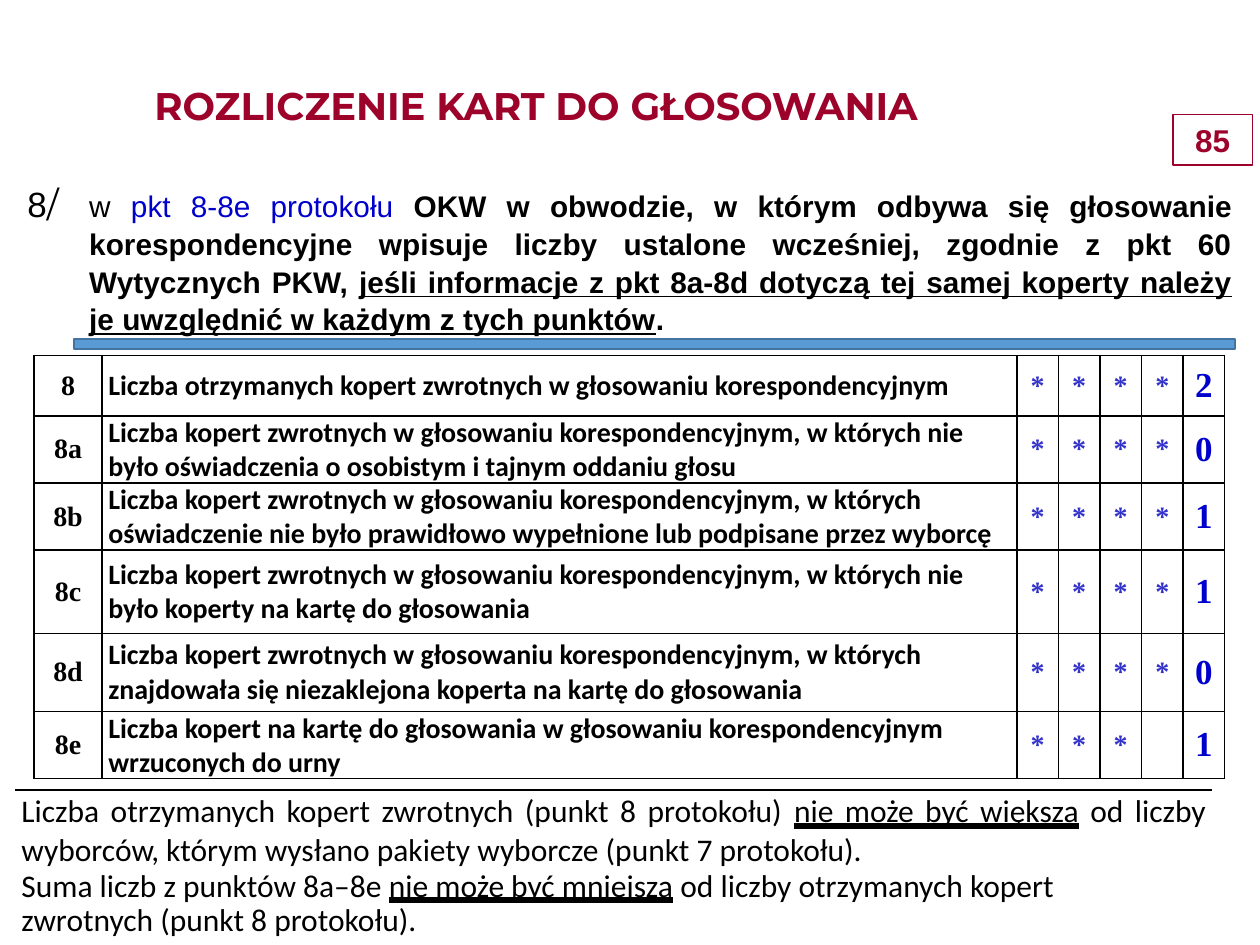
import pptx
import pptx.util
import pptx.dml.color
import pptx.enum.shapes
import pptx.enum.text
import pptx.oxml.ns
from lxml import etree

RGB = pptx.dml.color.RGBColor
ALIGN = pptx.enum.text.PP_ALIGN
MID = pptx.enum.text.MSO_ANCHOR.MIDDLE
HEAVY = pptx.enum.text.MSO_UNDERLINE.HEAVY_LINE
RECT = pptx.enum.shapes.MSO_SHAPE.RECTANGLE
Pt = pptx.util.Pt
qn = pptx.oxml.ns.qn

RED = RGB(0x9D, 0x03, 0x2A)
BLACK = RGB(0, 0, 0)
BLUE = RGB(0, 0, 0xCC)
STAR = RGB(0x33, 0x33, 0xCC)
BAR = RGB(0x5B, 0x9B, 0xD5)
EDGE = RGB(0x43, 0x73, 0x9E)
SERIF = "Times New Roman"

# The slide is a grid of 100 columns by 75 rows
WIDE, HIGH = pptx.util.Inches(10), pptx.util.Inches(7.5)
UNIT = WIDE // 100

ROWS = [
    ("8", "Liczba otrzymanych kopert zwrotnych w głosowaniu korespondencyjnym", "****2"),
    ("8a", "Liczba kopert zwrotnych w głosowaniu korespondencyjnym, w których nie "
     "było oświadczenia o osobistym i tajnym oddaniu głosu", "****0"),
    ("8b", "Liczba kopert zwrotnych w głosowaniu korespondencyjnym, w których "
     "oświadczenie nie było prawidłowo wypełnione lub podpisane przez wyborcę", "****1"),
    ("8c", "Liczba kopert zwrotnych w głosowaniu korespondencyjnym, w których nie "
     "było koperty na kartę do głosowania", "****1"),
    ("8d", "Liczba kopert zwrotnych w głosowaniu korespondencyjnym, w których "
     "znajdowała się niezaklejona koperta na kartę do głosowania", "****0"),
    ("8e", "Liczba kopert na kartę do głosowania w głosowaniu korespondencyjnym "
     "wrzuconych do urny", "*** 1"),
]
NOTES = [
    ("Liczba otrzymanych kopert zwrotnych (punkt 8 protokołu) ", "nie może być większa",
     " od liczby wyborców, którym wysłano pakiety wyborcze (punkt 7 protokołu)."),
    ("Suma liczb z punktów 8a–8e ", "nie może być mniejsza",
     " od liczby otrzymanych kopert"),
    ("zwrotnych (punkt 8 protokołu).",),
]


def grid(*cells):
    return [round(c * UNIT) for c in cells]


def style(run, size, face, ink=BLACK, bold=False, line=None):
    font = run.font
    font.size, font.name, font.bold = Pt(size), face, bold
    font.color.rgb = ink
    if line:
        font.underline = line


def add_run(para, text, *look):
    run = para.add_run()
    run.text = text
    style(run, *look)


def add_rect(slide, box, line, width, fill=None):
    shape = slide.shapes.add_shape(RECT, *grid(*box))
    shape.shadow.inherit = False
    if fill is None:
        shape.fill.background()
    else:
        shape.fill.solid()
        shape.fill.fore_color.rgb = fill
    shape.line.color.rgb = line
    shape.line.width = Pt(width)
    return shape


def add_title(slide, box):
    title = slide.shapes.title
    title.left, title.top, title.width, title.height = grid(*box)
    frame = title.text_frame
    frame.text = "ROZLICZENIE KART DO GŁOSOWANIA"
    frame.vertical_anchor = MID
    frame.auto_size = pptx.enum.text.MSO_AUTO_SIZE.NONE
    para = frame.paragraphs[0]
    para.alignment, para.line_spacing = ALIGN.CENTER, 1.0
    style(para.runs[0], 22, "Montserrat", RED, True)


def add_page(slide, box):
    frame = add_rect(slide, box, RED, 0.75).text_frame
    frame.text = "85"
    frame.vertical_anchor = MID
    para = frame.paragraphs[0]
    para.alignment = ALIGN.CENTER
    style(para.runs[0], 18, "Arial", RED, True)


def add_rule(slide, box):
    frame = slide.shapes.add_textbox(*grid(*box)).text_frame
    frame.word_wrap = True
    para = frame.paragraphs[0]
    para.alignment, para.line_spacing = ALIGN.JUSTIFY, 1.05
    hang = grid(4.9)[0]
    props = para._p.get_or_add_pPr()
    props.set("marL", str(hang))
    props.set("indent", str(-hang))
    add_run(para, "8", 20, "Arial")
    add_run(para, "/", 20, "Montserrat")
    add_run(para, "\t", 18, "Arial")
    add_run(para, "w ", 17, "Arial")
    add_run(para, "pkt 8-8e protokołu ", 17, "Arial", BLUE)
    add_run(para, "OKW w obwodzie, w którym odbywa się głosowanie korespondencyjne wpisuje "
            "liczby ustalone wcześniej, zgodnie z pkt 60 Wytycznych PKW, ",
            17, "Arial", BLACK, True)
    add_run(para, "jeśli informacje z pkt 8a-8d dotyczą tej samej koperty należy je "
            "uwzględnić w każdym z tych punktów", 17, "Arial", BLACK, True, True)
    add_run(para, ".", 17, "Arial", BLACK, True)


def set_cell(cell, sides):
    """Clear the fill, set margins and draw the named borders."""
    cell.vertical_anchor = MID
    cell.margin_left, cell.margin_right = grid(0.5, 0.5)
    cell.margin_top = cell.margin_bottom = 0
    props = cell._tc.get_or_add_tcPr()
    for side in "LRTB":
        edge = etree.SubElement(props, qn("a:ln" + side), w=str(Pt(1)))
        if side in sides:
            fill = etree.SubElement(edge, qn("a:solidFill"))
            etree.SubElement(fill, qn("a:srgbClr"), val=str(BLACK))
        else:
            etree.SubElement(edge, qn("a:noFill"))
    cell.fill.background()


def add_table(slide, spot, cols, rows, sides):
    box = grid(*spot, sum(cols), sum(rows))
    table = slide.shapes.add_table(len(rows), len(cols), *box).table
    table.first_row = table.horz_banding = False
    for col, size in zip(table.columns, grid(*cols)):
        col.width = size
    for row, size in zip(table.rows, grid(*rows)):
        row.height = size
        for cell in row.cells:
            set_cell(cell, sides)
    return table


def add_count(slide, spot):
    table = add_table(slide, spot, [5.4, 72.6] + [3.3] * 5,
                      [4.8, 5.3, 5.3, 6.6, 6.2, 5.3], "LRTB")
    looks = ([(16, SERIF, BLACK, True), (16, "Calibri", BLACK, True)]
             + [(16, SERIF, STAR, True)] * 4 + [(20, SERIF, BLUE, True)])
    for row, (mark, label, marks) in zip(table.rows, ROWS):
        for num, (cell, text) in enumerate(zip(row.cells, (mark, label, *marks))):
            if text == " ":
                continue
            para = cell.text_frame.paragraphs[0]
            para.alignment = ALIGN.LEFT if num == 1 else ALIGN.CENTER
            add_run(para, text, *looks[num])


def add_notes(slide, spot):
    frame = add_table(slide, spot, [95], [12], "T").cell(0, 0).text_frame
    for num, parts in enumerate(NOTES):
        para = frame.add_paragraph() if num else frame.paragraphs[0]
        para.alignment = ALIGN.LEFT if num else ALIGN.JUSTIFY
        para.line_spacing = 0.9 if num else 1.0
        for part, line in zip(parts, (None, HEAVY, None)):
            add_run(para, part, 18, "Calibri", BLACK, False, line)


def main():
    deck = pptx.Presentation()
    deck.slide_width, deck.slide_height = WIDE, HIGH
    slide = deck.slides.add_slide(deck.slide_layouts[5])
    # Heading and page number
    add_title(slide, (7.5, 6, 70.1, 4.7))
    add_page(slide, (93.1, 9.1, 6.3, 4))
    # Rule, count table and notes
    add_rule(slide, (1.2, 13.8, 97.6, 13.5))
    add_count(slide, (2.7, 28.2))
    add_notes(slide, (1.2, 62.7))
    # Blue bar
    add_rect(slide, (5.9, 26.9, 92.1, 0.8), EDGE, 1, BAR)
    deck.save("out.pptx")


if __name__ == "__main__":
    main()
